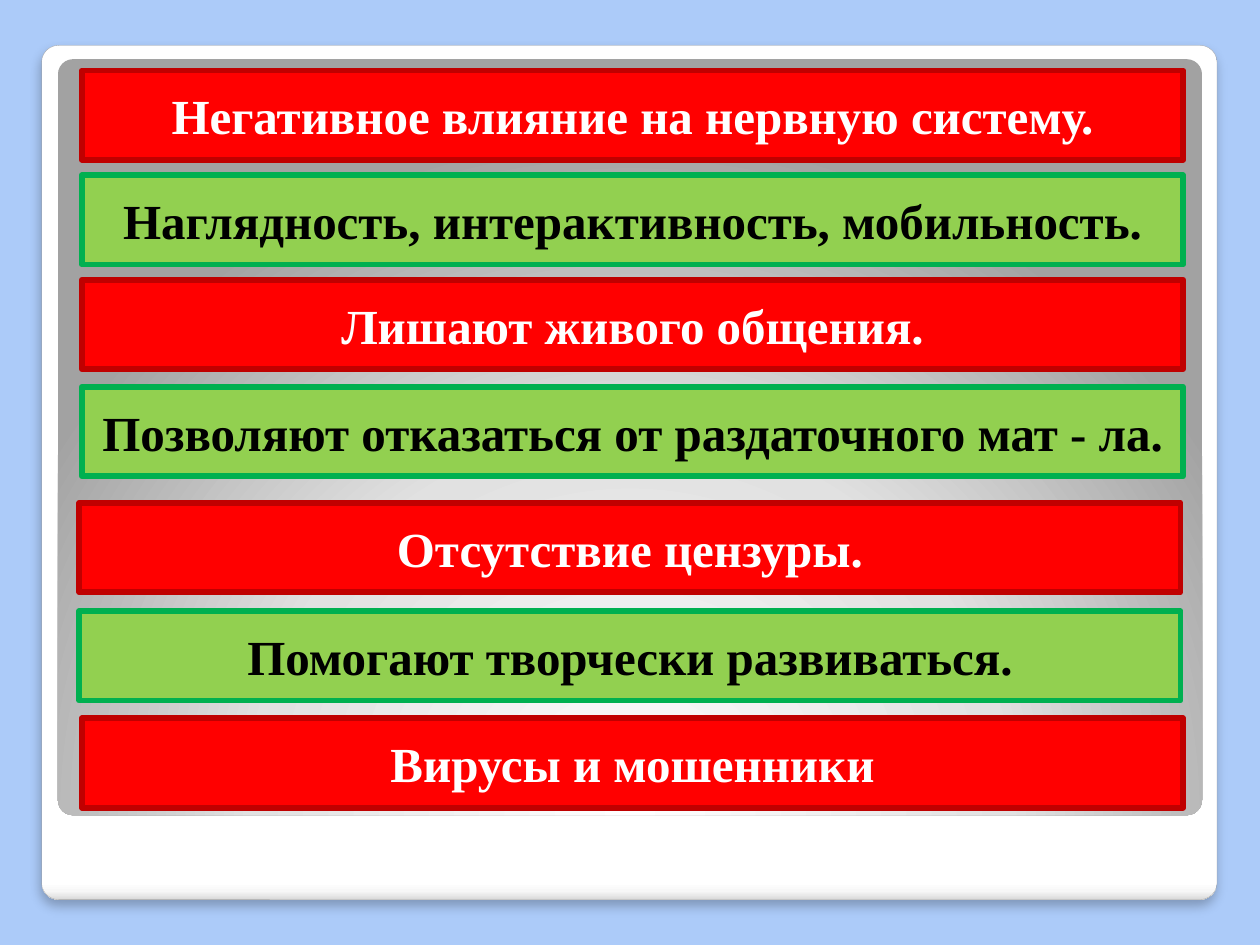
from lxml import etree
from pptx import Presentation, util as u
from pptx.dml.color import RGBColor
from pptx.enum import shapes, text
from pptx.oxml import parse_xml
from pptx.oxml.ns import nsdecls, qn

THEME = {
    "background": "ACCBF9",
    "frame_line": "A4A4A4",
    "frame_stops": [(0, "FFFFFF"), (98, "FFFFFF"), (99, "F7F7F7"), (100, "DADADA")],
    "panel_stops": [(0, "FFFFFF"), (55, "E1E1E1"), (100, "A2A2A2")],
    "minus": {"fill": "FF0000", "line": "C00000", "text": "FFFFFF"},
    "plus": {"fill": "92D050", "line": "00B050", "text": "000000"},
    "font": "Times New Roman",
    "size": u.Pt(28),
    "frame_border": u.Pt(0.16),
    "bar_border": u.Pt(3.35),
}

presentation = Presentation()
presentation.slide_width, presentation.slide_height = u.Inches(10), u.Inches(7.5)
slide = presentation.slides.add_slide(presentation.slide_layouts[6])
slide.background.fill.solid()
slide.background.fill.fore_color.rgb = RGBColor.from_string(THEME["background"])

# Fine square grid: 1000 columns by 750 rows
COLUMN = presentation.slide_width // 1000
ROW = presentation.slide_height // 750


def add_box(preset, left, top, width, height):
    shape = slide.shapes.add_shape(
        preset, left * COLUMN, top * ROW, width * COLUMN, height * ROW)
    shape.shadow.inherit = False
    return shape


def set_gradient(shape, stops, direction):
    shape.fill.background()
    stop_list = "".join(
        f'<a:gs pos="{position * 1000}"><a:srgbClr val="{color}"/></a:gs>'
        for position, color in stops)
    gradient = parse_xml(
        f'<a:gradFill {nsdecls("a")} rotWithShape="1">'
        f"<a:gsLst>{stop_list}</a:gsLst>{direction}</a:gradFill>")
    properties = shape.element.spPr
    properties.replace(properties.find(qn("a:noFill")), gradient)


# White frame with a soft shadow below
frame = add_box(shapes.MSO_SHAPE.ROUNDED_RECTANGLE, 33, 36, 933, 678)
frame.adjustments[0] = 0.02
set_gradient(frame, THEME["frame_stops"], '<a:lin ang="5400000" scaled="0"/>')
frame.line.color.rgb = RGBColor.from_string(THEME["frame_line"])
frame.line.width = THEME["frame_border"]
effects = frame.element.spPr.find(qn("a:effectLst"))
shadow = etree.SubElement(
    effects, qn("a:outerShdw"), blurRad=str(u.Pt(6)), dist=str(u.Pt(4)),
    dir="5400000", algn="t", rotWithShape="0")
shadow_color = etree.SubElement(shadow, qn("a:srgbClr"), val="000000")
etree.SubElement(shadow_color, qn("a:alpha"), val="25000")

# Grey panel, lit from below
panel = add_box(shapes.MSO_SHAPE.ROUNDED_RECTANGLE, 46, 47, 908, 600)
panel.adjustments[0] = 0.02
set_gradient(
    panel, THEME["panel_stops"],
    '<a:path path="circle">'
    '<a:fillToRect l="50000" t="175000" r="50000" b="-75000"/></a:path>')
panel.line.fill.background()

# Drawbacks (minus) and benefits (plus): left column, top row, kind, wording
bars = [
    (65, 56, "minus", "Негативное влияние на нервную систему."),
    (65, 139, "plus", "Наглядность, интерактивность, мобильность."),
    (65, 222, "minus", "Лишают живого общения."),
    (65, 307, "plus", "Позволяют отказаться от раздаточного мат - ла."),
    (63, 399, "minus", "Отсутствие цензуры."),
    (63, 485, "plus", "Помогают творчески развиваться."),
    (65, 570, "minus", "Вирусы и мошенники"),
]
for left, top, kind, wording in bars:
    colors = THEME[kind]
    bar = add_box(shapes.MSO_SHAPE.RECTANGLE, left, top, 874, 71)
    bar.fill.solid()
    bar.fill.fore_color.rgb = RGBColor.from_string(colors["fill"])
    bar.line.color.rgb = RGBColor.from_string(colors["line"])
    bar.line.width = THEME["bar_border"]
    bar.text_frame.text = wording
    bar.text_frame.word_wrap = True
    bar.text_frame.vertical_anchor = text.MSO_ANCHOR.MIDDLE
    paragraph = bar.text_frame.paragraphs[0]
    paragraph.alignment = text.PP_ALIGN.CENTER
    font = paragraph.runs[0].font
    font.name, font.size, font.bold = THEME["font"], THEME["size"], True
    font.color.rgb = RGBColor.from_string(colors["text"])

presentation.save("out.pptx")
